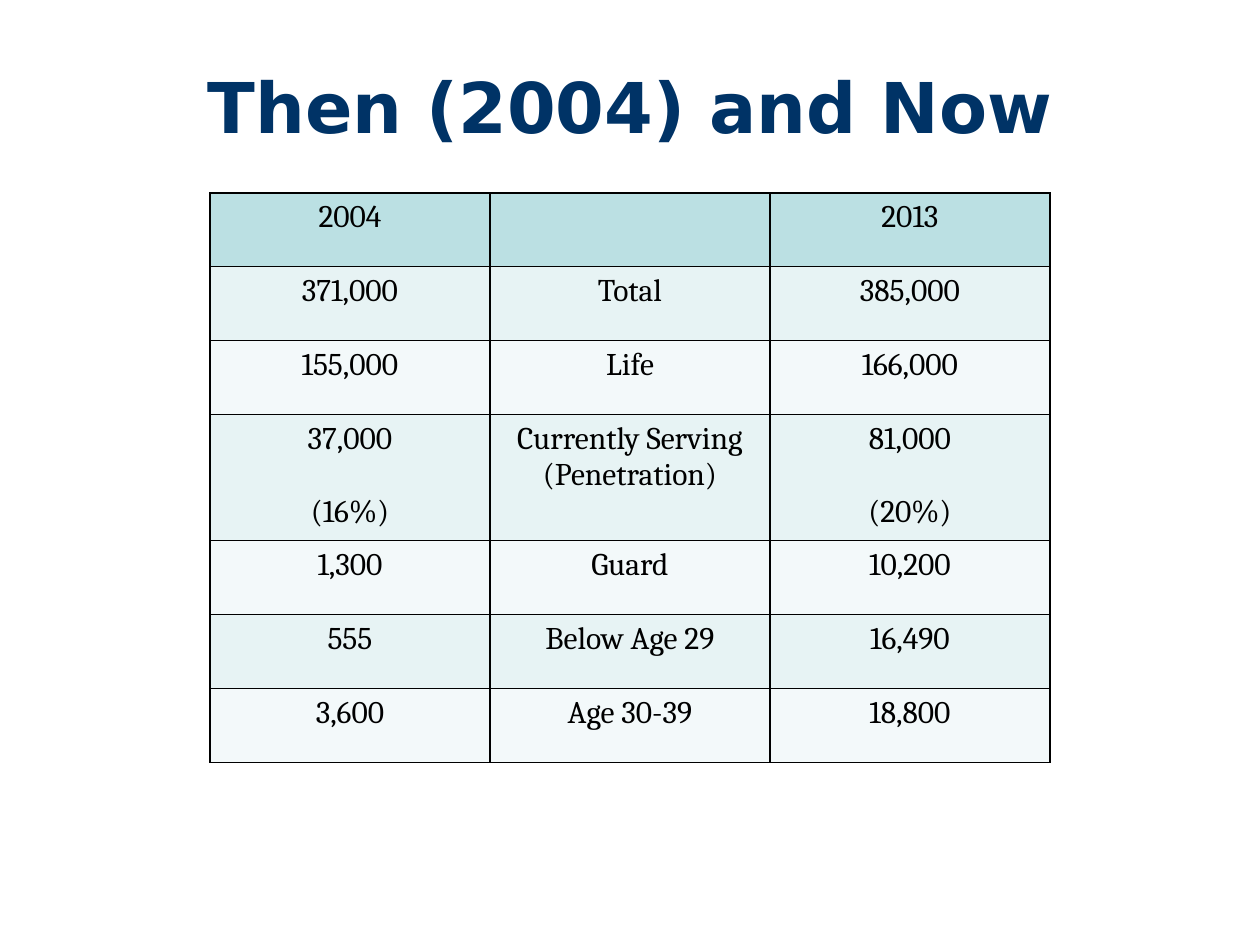
import pptx
import pptx.dml.color
import pptx.enum.text
import pptx.oxml
import pptx.oxml.ns
import pptx.util

COLORS = {
    "title": "003366",
    "text": "000000",
    "border": "000000",
    "header": "BBE0E3",
    "odd": "E7F3F4",
    "even": "F3F9FA",
}

ROWS = [
    ("2004", "", "2013"),
    ("371,000", "Total", "385,000"),
    ("155,000", "Life", "166,000"),
    ("37,000\n(16%)", "Currently Serving\n(Penetration)", "81,000\n(20%)"),
    ("1,300", "Guard", "10,200"),
    ("555", "Below Age 29", "16,490"),
    ("3,600", "Age 30-39", "18,800"),
]


class SlideBuilder:
    """Draws styled elements on one slide, placed by shares of its size."""

    def __init__(self, deck):
        self.width, self.height = deck.slide_width, deck.slide_height
        self.page = deck.slides.add_slide(deck.slide_layouts[6])

    def area(self, left, top, width, height):
        return (
            round(left * self.width),
            round(top * self.height),
            round(width * self.width),
            round(height * self.height),
        )

    def set_text(self, frame, text, font, size, color, bold=False, gap=0):
        frame.text = text
        for index, para in enumerate(frame.paragraphs):
            para.alignment = pptx.enum.text.PP_ALIGN.CENTER
            if index and gap:
                para.space_before = pptx.util.Pt(gap)
            para.font.size = pptx.util.Pt(size)
            for span in para.runs:
                span.font.name = font
                span.font.size = pptx.util.Pt(size)
                span.font.bold = bold
                span.font.color.rgb = pptx.dml.color.RGBColor.from_string(COLORS[color])

    def title(self, text, *shares):
        box = self.page.shapes.add_textbox(*self.area(*shares))
        box.text_frame.word_wrap = True
        box.text_frame.vertical_anchor = pptx.enum.text.MSO_ANCHOR.MIDDLE
        self.set_text(box.text_frame, text, "DejaVu Sans", 40, "title", bold=True)

    def border(self, cell):
        properties = cell._tc.get_or_add_tcPr()
        for index, side in enumerate(("lnL", "lnR", "lnT", "lnB")):
            line = pptx.oxml.parse_xml(
                f'<a:{side} {pptx.oxml.ns.nsdecls("a")} w="12700"><a:solidFill>'
                f'<a:srgbClr val="{COLORS["border"]}"/></a:solidFill></a:{side}>'
            )
            properties.insert(index, line)

    def table(self, rows, tall_row, tall_share, *shares):
        area = self.area(*shares)
        table = self.page.shapes.add_table(len(rows), len(rows[0]), *area).table
        tall = round(tall_share * self.height)
        for index, (row, texts) in enumerate(zip(table.rows, rows)):
            row.height = tall if index == tall_row else (area[3] - tall) // (len(rows) - 1)
            fill = "header" if index == 0 else "odd" if index % 2 else "even"
            for column, (cell, text) in enumerate(zip(row.cells, texts)):
                cell.fill.solid()
                cell.fill.fore_color.rgb = pptx.dml.color.RGBColor.from_string(COLORS[fill])
                self.border(cell)
                gap = 0 if column == 1 else 21
                self.set_text(cell.text_frame, text, "Cambria", 18, "text", gap=gap)


def main():
    deck = pptx.Presentation()
    deck.slide_width = pptx.util.Inches(10)
    deck.slide_height = pptx.util.Inches(7.5)
    slide = SlideBuilder(deck)
    slide.title("Then (2004) and Now", 0.075, 0.17 / 7.5, 0.85, 1.33 / 7.5)
    slide.table(ROWS, 3, 1 / 7.5, 1 / 6, 1.53 / 7.5, 2 / 3, 4.52 / 7.5)
    deck.save("out.pptx")


if __name__ == "__main__":
    main()
